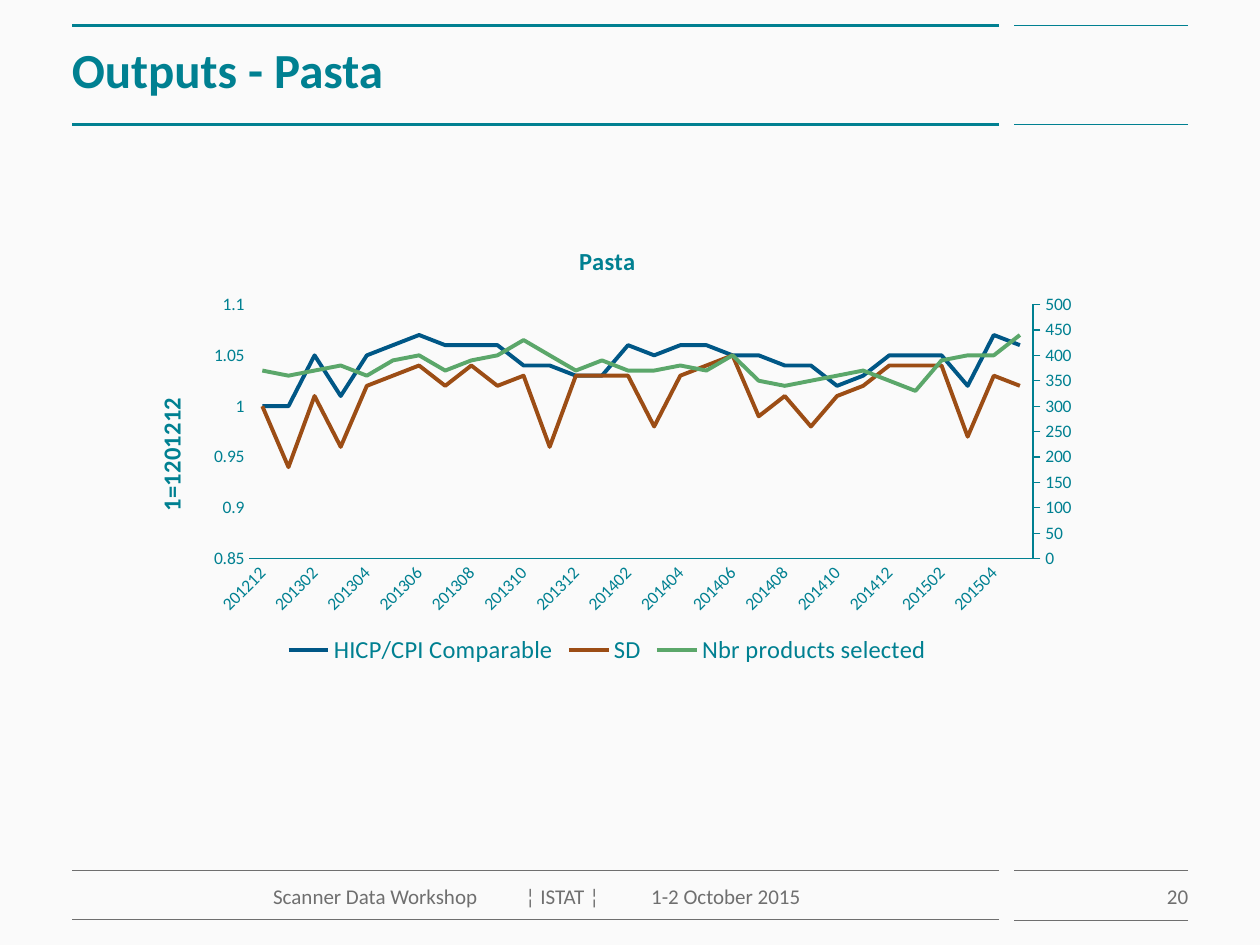
from copy import deepcopy
from dataclasses import dataclass

from lxml import etree
from pptx import Presentation
from pptx.chart.data import CategoryChartData
from pptx.dml.color import RGBColor
from pptx.enum import chart as charts, shapes, text
from pptx.oxml import parse_xml
from pptx.oxml.ns import nsdecls, qn
from pptx.util import Inches, Pt


@dataclass(frozen=True)
class Theme:
    font: str = "Calibri"
    background: str = "FAFAFA"
    accent: str = "008091"
    muted: str = "6F6F6F"
    title_size: int = 28
    heading_size: int = 14
    footer_size: int = 12
    axis_size: int = 10
    series_width: float = 2.25


@dataclass(frozen=True)
class Rule:
    top: float
    color: str
    main_width: float
    side_width: float


@dataclass(frozen=True)
class Label:
    words: str
    at: tuple[float, float, float, float]
    size: int
    color: str
    align: text.PP_ALIGN
    anchor: text.MSO_ANCHOR
    top_inset: float = 0
    bottom_inset: float = 0
    bold: bool = False


@dataclass(frozen=True)
class Series:
    name: str
    values: tuple[float, ...]
    color: str


THEME = Theme()
MAIN_SPAN = (7.93, 0.57)
SIDE_SPAN = (9.43, 8.05)

RULES = [
    Rule(0.2, THEME.accent, 1.5, 0.75),
    Rule(0.99, THEME.accent, 1.5, 0.75),
    Rule(6.91, THEME.muted, 0.75, 0.25),
    Rule(7.3, THEME.muted, 0.75, 0.25),
]

LABELS = [
    Label("Outputs - Pasta", (0.57, 0.2, 7.36, 0.79), THEME.title_size, THEME.accent,
          text.PP_ALIGN.LEFT, text.MSO_ANCHOR.MIDDLE, bottom_inset=0.1, bold=True),
    Label("20", (8.05, 6.91, 1.38, 0.39), THEME.footer_size, THEME.muted,
          text.PP_ALIGN.RIGHT, text.MSO_ANCHOR.TOP, top_inset=0.1),
    Label("Scanner Data Workshop\t¦ ISTAT ¦\t1-2 October 2015", (0.59, 6.91, 7.34, 0.39),
          THEME.footer_size, THEME.muted,
          text.PP_ALIGN.CENTER, text.MSO_ANCHOR.TOP, top_inset=0.1),
]

MONTHS = ["201212"] + [f"{year}{month:02d}" for year, last in
                       ((2013, 12), (2014, 12), (2015, 5))
                       for month in range(1, last + 1)]

SERIES = [
    Series("HICP/CPI Comparable",
           (1, 1, 1.05, 1.01, 1.05, 1.06, 1.07, 1.06, 1.06, 1.06, 1.04, 1.04, 1.03, 1.03, 1.06,
            1.05, 1.06, 1.06, 1.05, 1.05, 1.04, 1.04, 1.02, 1.03, 1.05, 1.05, 1.05, 1.02, 1.07,
            1.06), "005786"),
    Series("SD",
           (1, 0.94, 1.01, 0.96, 1.02, 1.03, 1.04, 1.02, 1.04, 1.02, 1.03, 0.96, 1.03, 1.03, 1.03,
            0.98, 1.03, 1.04, 1.05, 0.99, 1.01, 0.98, 1.01, 1.02, 1.04, 1.04, 1.04, 0.97, 1.03,
            1.02), "9C4D15"),
    Series("Nbr products selected",
           (370, 360, 370, 380, 360, 390, 400, 370, 390, 400, 430, 400, 370, 390, 370,
            370, 380, 370, 400, 350, 340, 350, 360, 370, 350, 330, 390, 400, 400,
            440), "5BA76A"),
]


def style_font(font, size: float, color: str, bold: bool = False) -> None:
    font.name, font.size, font.bold = THEME.font, Pt(size), bold
    font.color.rgb = RGBColor.from_string(color)


def draw_line(page, span: tuple[float, float], top: float, color: str, width: float) -> None:
    start, end = span
    line = page.shapes.add_connector(shapes.MSO_CONNECTOR.STRAIGHT, Inches(start), Inches(top),
                                     Inches(end), Inches(top))
    line.line.color.rgb = RGBColor.from_string(color)
    line.line.width = Pt(width)
    etree.SubElement(line._element.spPr, qn("a:effectLst"))


def draw_rule(page, rule: Rule) -> None:
    draw_line(page, MAIN_SPAN, rule.top, rule.color, rule.main_width)
    draw_line(page, SIDE_SPAN, rule.top, rule.color, rule.side_width)


def draw_label(page, label: Label) -> None:
    frame = page.shapes.add_textbox(*map(Inches, label.at)).text_frame
    frame.word_wrap = True
    frame.vertical_anchor = label.anchor
    frame.margin_left = frame.margin_right = 0
    frame.margin_top, frame.margin_bottom = Inches(label.top_inset), Inches(label.bottom_inset)
    para = frame.paragraphs[0]
    para.alignment = label.align
    span = para.add_run()
    span.text = label.words
    style_font(span.font, label.size, label.color, label.bold)


def set_title(owner, words: str) -> None:
    """Give a chart or an axis a bold title."""
    span = owner.text_frame.paragraphs[0].add_run()
    span.text = words
    style_font(span.font, THEME.heading_size, THEME.accent, bold=True)


def style_axis(axis, ticks) -> None:
    axis.has_major_gridlines = False
    axis.major_tick_mark, axis.minor_tick_mark = ticks, charts.XL_TICK_MARK.NONE
    style_font(axis.tick_labels.font, THEME.axis_size, THEME.accent)
    axis.format.line.color.rgb = RGBColor.from_string(THEME.accent)
    axis.format.line.width = Pt(0.75)


def set_plot_layout(plot_area, **parts: float) -> None:
    """Fix the inner plot rectangle as fractions of the chart."""
    for old in plot_area.findall(qn("c:layout")):
        plot_area.remove(old)
    sizes = "".join(f'<c:{key} val="{value}"/>' for key, value in parts.items())
    plot_area.insert(0, parse_xml(
        f'<c:layout {nsdecls("c")}><c:manualLayout><c:layoutTarget val="inner"/>'
        f'<c:xMode val="edge"/><c:yMode val="edge"/>{sizes}</c:manualLayout></c:layout>'))


def move_last_series_right(plot_area) -> None:
    """Put the last series on a second value axis at the right."""
    left_plot = plot_area.find(qn("c:lineChart"))
    right_plot = deepcopy(left_plot)
    left_plot.remove(left_plot.findall(qn("c:ser"))[-1])
    for series in right_plot.findall(qn("c:ser"))[:-1]:
        right_plot.remove(series)
    left_plot.addnext(right_plot)
    for axis_id, number in zip(right_plot.findall(qn("c:axId")), ("501", "502")):
        axis_id.set("val", number)
    line = (f'<c:spPr><a:ln w="9525"><a:solidFill><a:srgbClr val="{THEME.accent}"/>'
            '</a:solidFill></a:ln></c:spPr>')
    font = (f'<c:txPr><a:bodyPr/><a:p><a:pPr><a:defRPr sz="{THEME.axis_size * 100}" b="0">'
            f'<a:solidFill><a:srgbClr val="{THEME.accent}"/></a:solidFill>'
            f'<a:latin typeface="{THEME.font}"/></a:defRPr></a:pPr>'
            '<a:endParaRPr lang="en-US"/></a:p></c:txPr>')
    value_axis = parse_xml(
        f'<c:valAx {nsdecls("c", "a")}><c:axId val="502"/><c:scaling>'
        '<c:orientation val="minMax"/><c:max val="500"/><c:min val="0"/></c:scaling>'
        '<c:delete val="0"/><c:axPos val="r"/><c:numFmt formatCode="General" sourceLinked="0"/>'
        '<c:majorTickMark val="out"/><c:minorTickMark val="none"/><c:tickLblPos val="nextTo"/>'
        f'{line}{font}<c:crossAx val="501"/><c:crosses val="max"/>'
        '<c:crossBetween val="between"/><c:majorUnit val="50"/></c:valAx>')
    category_axis = parse_xml(
        f'<c:catAx {nsdecls("c")}><c:axId val="501"/><c:scaling>'
        '<c:orientation val="minMax"/></c:scaling><c:delete val="1"/><c:axPos val="b"/>'
        '<c:majorTickMark val="none"/><c:minorTickMark val="none"/><c:tickLblPos val="nextTo"/>'
        '<c:crossAx val="502"/><c:crosses val="autoZero"/></c:catAx>')
    last_axis = plot_area.find(qn("c:valAx"))
    last_axis.addnext(value_axis)
    value_axis.addnext(category_axis)


def draw_chart(page) -> None:
    data = CategoryChartData(number_format="General")
    data.categories = MONTHS
    for series in SERIES:
        data.add_series(series.name, series.values)
    chart = page.shapes.add_chart(charts.XL_CHART_TYPE.LINE, Inches(0.98), Inches(1.78),
                                  Inches(7.68), Inches(3.54), data).chart
    style_font(chart.font, THEME.axis_size, THEME.accent)
    chart.has_title = True
    set_title(chart.chart_title, "Pasta")
    chart.has_legend = True
    chart.legend.position = charts.XL_LEGEND_POSITION.BOTTOM
    chart.legend.include_in_layout = False
    style_font(chart.legend.font, THEME.heading_size, THEME.accent)

    plot = chart.plots[0]
    plot.vary_by_categories = False
    for drawn, series in zip(plot.series, SERIES):
        drawn.smooth = False
        drawn.marker.style = charts.XL_MARKER_STYLE.NONE
        drawn.format.line.color.rgb = RGBColor.from_string(series.color)
        drawn.format.line.width = Pt(THEME.series_width)

    months, index = chart.category_axis, chart.value_axis
    for axis in (months, index):
        style_axis(axis, charts.XL_TICK_MARK.NONE)
    months.tick_labels.font._element.getparent().getparent().getparent().find(
        qn("a:bodyPr")).set("rot", "-2700000")
    no_labels = months._element.find(qn("c:noMultiLvlLbl"))
    no_labels.addprevious(parse_xml(f'<c:tickLblSkip {nsdecls("c")} val="2"/>'))
    index.minimum_scale, index.maximum_scale, index.major_unit = 0.85, 1.1, 0.05
    index.tick_labels.number_format = "General"
    index.tick_labels.number_format_is_linked = False
    index.format.line.fill.background()
    set_title(index.axis_title, "1=1201212")

    plot_area = chart._chartSpace.chart.plotArea
    set_plot_layout(plot_area, x=0.13, y=0.18, w=0.81, h=0.57)
    move_last_series_right(plot_area)


def main() -> None:
    deck = Presentation()
    deck.slide_width, deck.slide_height = Inches(10), Inches(7.5)
    page = deck.slides.add_slide(deck.slide_layouts[6])
    page.background.fill.solid()
    page.background.fill.fore_color.rgb = RGBColor.from_string(THEME.background)
    for rule in RULES:
        draw_rule(page, rule)
    for label in LABELS:
        draw_label(page, label)
    draw_chart(page)
    deck.save("out.pptx")


if __name__ == "__main__":
    main()
